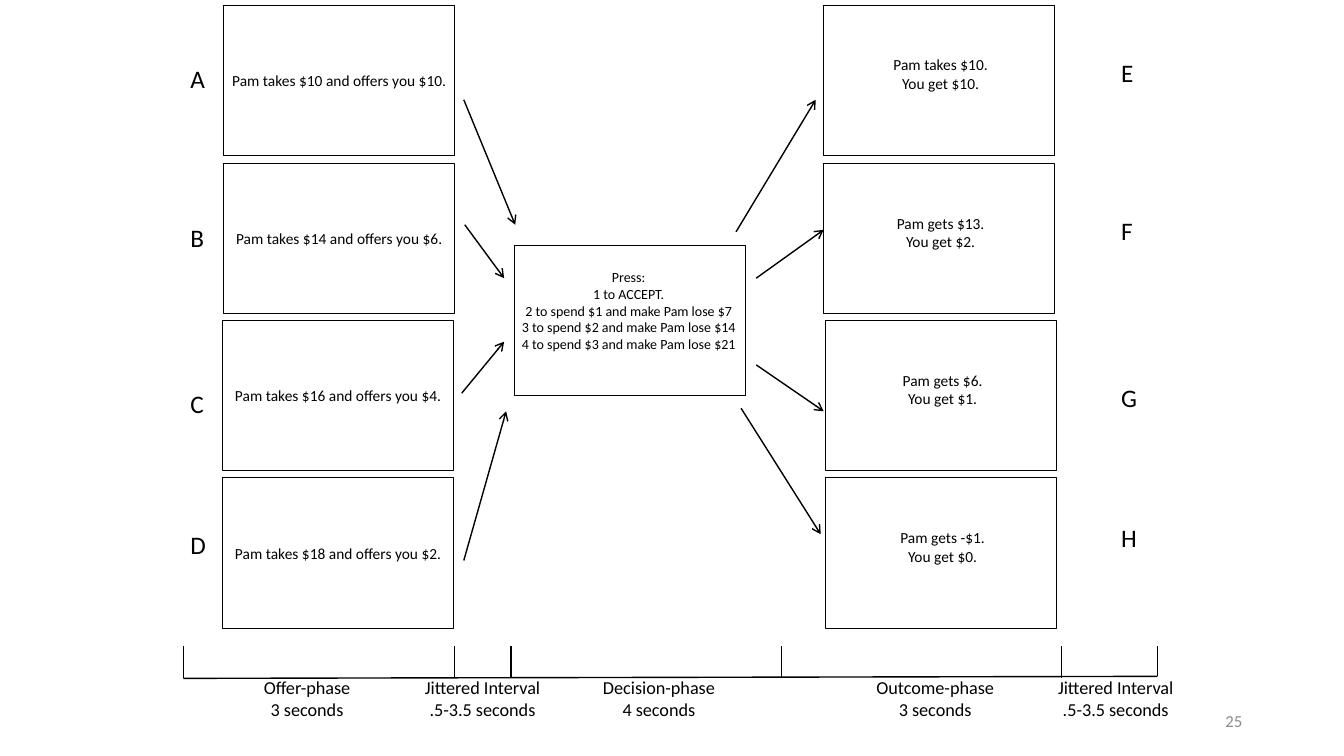
from dataclasses import dataclass

from lxml import etree
from pptx import Presentation
from pptx.dml.color import RGBColor
from pptx.enum.shapes import MSO_CONNECTOR, MSO_SHAPE
from pptx.enum.text import MSO_ANCHOR, PP_ALIGN
from pptx.oxml.ns import qn
from pptx.util import Inches, Pt


@dataclass(frozen=True)
class Theme:
    font: str = "Calibri"
    ink: RGBColor = RGBColor(0, 0, 0)
    paper: RGBColor = RGBColor(255, 255, 255)
    grey: RGBColor = RGBColor(0x8C, 0x8C, 0x8C)
    choice: Pt = Pt(10)
    screen: Pt = Pt(11)
    page: Pt = Pt(12)
    phase: Pt = Pt(13)
    letter: Pt = Pt(18)
    frame_line: Pt = Pt(0.5)
    line: Pt = Pt(1)


theme = Theme()


def add_text(shapes, box, lines, size, align=PP_ALIGN.CENTER,
             anchor=MSO_ANCHOR.MIDDLE, color=theme.ink, side=0.1):
    """Add a text box with one paragraph per line; side is its left and right inset."""
    tf = shapes.add_textbox(*map(Inches, box)).text_frame
    tf.word_wrap = True
    tf.vertical_anchor = anchor
    tf.margin_left = tf.margin_right = Inches(side)
    for i, line in enumerate(lines):
        p = tf.add_paragraph() if i else tf.paragraphs[0]
        p.text = line
        p.alignment = align
        p.font.name = theme.font
        p.font.size = size
        p.font.color.rgb = color


def add_line(shapes, start, end, arrow=False):
    c = shapes.add_connector(MSO_CONNECTOR.STRAIGHT, *map(Inches, (*start, *end)))
    c.line.color.rgb = theme.ink
    c.line.width = theme.line
    if arrow:
        etree.SubElement(c.line._get_or_add_ln(), qn("a:tailEnd"), type="arrow")
    etree.SubElement(c._element.spPr, qn("a:effectLst"))


prs = Presentation()
prs.slide_width, prs.slide_height = Inches(13.33), Inches(7.5)
s = prs.slides.add_slide(prs.slide_layouts[6])

# Screens: frame left and top, text offset and size within the frame, type size, lines
row_tops = [0.05, 1.62, 3.18, 4.74]
offers = [
    (2.22, "Pam takes $10 and offers you $10."),
    (2.22, "Pam takes $14 and offers you $6."),
    (2.21, "Pam takes $16 and offers you $4."),
    (2.21, "Pam takes $18 and offers you $2."),
]
outcomes = [
    (8.17, "Pam takes $10.", "You get $10."),
    (8.17, "Pam gets $13.", "You get $2."),
    (8.19, "Pam gets $6.", "You get $1."),
    (8.19, "Pam gets -$1.", "You get $0."),
]
choices = [
    "Press:",
    "1 to ACCEPT.",
    "2 to spend $1 and make Pam lose $7",
    "3 to spend $2 and make Pam lose $14",
    "4 to spend $3 and make Pam lose $21",
]
screens = [(5.1, 2.43, (0.01, 0.18, 2.25, 0.94), theme.choice, choices)]
for top, (left, *lines) in zip(row_tops, offers):
    screens.append((left, top, (0.02, 0.6, 2.25, 0.29), theme.screen, lines))
for top, (left, *lines) in zip(row_tops, outcomes):
    screens.append((left, top, (0.16, 0.45, 2, 0.47), theme.screen, lines))

for left, top, (dx, dy, width, height), size, lines in screens:
    group = s.shapes.add_group_shape()
    sp = group.shapes.add_shape(
        MSO_SHAPE.RECTANGLE, *map(Inches, (left, top, 2.29, 1.49)))
    sp.shadow.inherit = False
    sp.fill.solid()
    sp.fill.fore_color.rgb = theme.paper
    sp.line.color.rgb = theme.ink
    sp.line.width = theme.frame_line
    add_text(group.shapes, (left + dx, top + dy, width, height), lines, size, side=0)

# Letters beside the screens
letter_columns = [
    (1.79, "ABCD", [0.58, 2.16, 3.8, 5.2]),
    (11.02, "EFGH", [0.52, 2.09, 3.74, 5.13]),
]
for left, letters, tops in letter_columns:
    for letter, top in zip(letters, tops):
        add_text(s.shapes, (left, top, 0.28, 0.4), [letter], theme.letter,
                 PP_ALIGN.LEFT, MSO_ANCHOR.TOP)

# Arrows from the offers to the decision, then on to the outcomes
arrows = [
    ((4.6, 0.99), (5.11, 2.23)),
    ((4.61, 2.23), (5, 2.76)),
    ((4.58, 3.9), (5, 3.39)),
    ((4.6, 5.56), (5.02, 4.08)),
    ((7.3, 2.3), (8.09, 0.99)),
    ((7.5, 2.76), (8.17, 2.28)),
    ((7.5, 3.62), (8.17, 4.08)),
    ((7.35, 4.05), (8.14, 5.3)),
]
for start, end in arrows:
    add_line(s.shapes, start, end, arrow=True)

# Timeline
axis_start, axis_end = (1.82, 6.73), (11.48, 6.71)
add_line(s.shapes, axis_start, axis_end)
for x, y in [axis_start, (4.51, 6.73), (5.07, 6.73), (7.75, 6.73), (10.53, 6.73), axis_end]:
    add_line(s.shapes, (x, y), (x, 6.41))

phases = [
    (2.29, "Offer-phase", "3 seconds"),
    (4.03, "Jittered Interval", ".5-3.5 seconds"),
    (5.78, "Decision-phase", "4 seconds"),
    (8.52, "Outcome-phase", "3 seconds"),
    (10.31, "Jittered Interval", ".5-3.5 seconds"),
]
for left, *lines in phases:
    add_text(s.shapes, (left, 6.66, 1.51, 0.54), lines, theme.phase)

add_text(s.shapes, (9.42, 6.95, 3, 0.4), ["25"], theme.page, PP_ALIGN.RIGHT,
         color=theme.grey)

prs.save("out.pptx")
